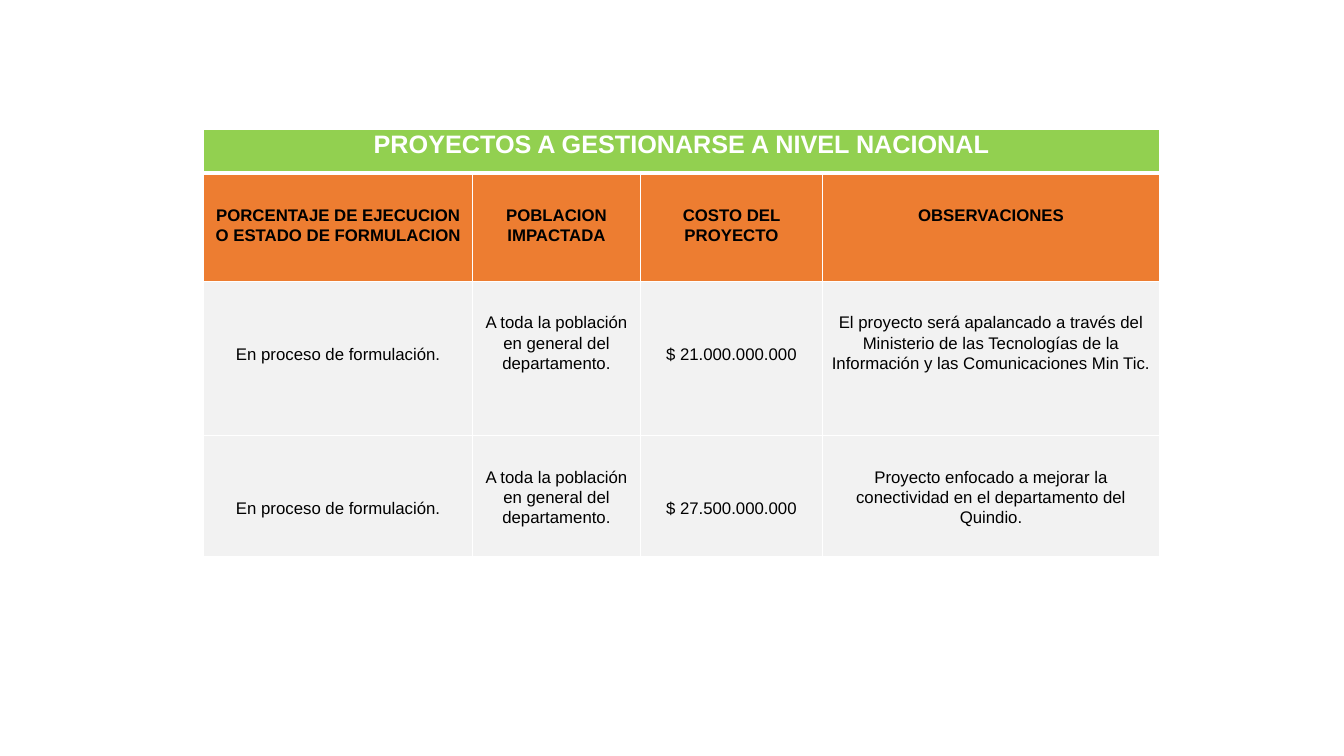
"""Build the slide with the table of projects to be managed at national level."""
from dataclasses import dataclass

from lxml import etree
from pptx import Presentation
from pptx.dml.color import RGBColor
from pptx.enum.text import MSO_ANCHOR, PP_ALIGN
from pptx.oxml.ns import qn
from pptx.table import _Cell
from pptx.util import Inches, Pt

CENTER = PP_ALIGN.CENTER
TOP = MSO_ANCHOR.TOP

WHITE, BLACK = "FFFFFF", "000000"
GREEN, ORANGE, GRAY = "92D050", "ED7D31", "F2F2F2"
FONT = "Arial"
LINE_DROP = 0.31
COLUMN_WIDTHS = (2.67, 1.66, 1.81, 3.34)


@dataclass(frozen=True)
class RowStyle:
    fill: str
    color: str
    size: int
    bold: bool
    top_border: int = 1
    bottom_border: int = 1


@dataclass(frozen=True)
class Entry:
    text: str
    lines_down: int = 1


@dataclass(frozen=True)
class TableRow:
    height: float
    style: RowStyle
    entries: tuple[Entry, ...]


TITLE = RowStyle(GREEN, WHITE, 18, True, bottom_border=3)
HEADING = RowStyle(ORANGE, BLACK, 12, True, top_border=3)
PROJECT = RowStyle(GRAY, BLACK, 12, False)


def project_row(height: float, cost: str, remarks: str) -> TableRow:
    return TableRow(height, PROJECT, (
        Entry("En proceso de formulación.", 2),
        Entry("A toda la población en general del departamento."),
        Entry(cost, 2),
        Entry(remarks),
    ))


ROWS = (
    TableRow(0.44, TITLE, (Entry("PROYECTOS A GESTIONARSE A NIVEL NACIONAL", 0),)),
    TableRow(1.07, HEADING, (
        Entry("PORCENTAJE DE EJECUCION O ESTADO DE FORMULACION"),
        Entry("POBLACION IMPACTADA"),
        Entry("COSTO DEL PROYECTO"),
        Entry("OBSERVACIONES"),
    )),
    project_row(1.53, "$ 21.000.000.000",
                "El proyecto será apalancado a través del Ministerio de las Tecnologías "
                "de la Información y las Comunicaciones Min Tic."),
    project_row(1.2, "$ 27.500.000.000",
                "Proyecto enfocado a mejorar la conectividad en el departamento del Quindio."),
)


def rgb(value: str) -> RGBColor:
    return RGBColor.from_string(value)


def style_cell(cell: _Cell, style: RowStyle) -> None:
    properties = cell._tc.get_or_add_tcPr()
    borders = {"a:lnL": 1, "a:lnR": 1, "a:lnT": style.top_border, "a:lnB": style.bottom_border}
    for tag, width in borders.items():
        border = etree.SubElement(properties, qn(tag), w=str(Pt(width)))
        solid = etree.SubElement(border, qn("a:solidFill"))
        etree.SubElement(solid, qn("a:srgbClr"), val=WHITE)
    cell.fill.solid()
    cell.fill.fore_color.rgb = rgb(style.fill)


def write_entry(cell: _Cell, entry: Entry, style: RowStyle) -> None:
    cell.margin_left = cell.margin_right = Inches(0.07)
    cell.margin_top = Inches(entry.lines_down * LINE_DROP)
    cell.margin_bottom = 0
    cell.vertical_anchor = TOP
    paragraph = cell.text_frame.paragraphs[0]
    paragraph.alignment = CENTER
    paragraph.line_spacing = 1.07
    paragraph.space_after = Pt(8)
    run = paragraph.add_run()
    run.text = entry.text
    run.font.name = FONT
    run.font.size = Pt(style.size)
    run.font.bold = style.bold
    run.font.color.rgb = rgb(style.color)


def main() -> None:
    presentation = Presentation()
    presentation.slide_width = Inches(13.33)
    presentation.slide_height = Inches(7.5)
    slide = presentation.slides.add_slide(presentation.slide_layouts[6])
    projects = slide.shapes.add_table(
        len(ROWS), len(COLUMN_WIDTHS), Inches(2.02), Inches(1.28),
        Inches(sum(COLUMN_WIDTHS)), Inches(sum(row.height for row in ROWS)),
    ).table
    projects.first_row = projects.horz_banding = False
    for column, width in zip(projects.columns, COLUMN_WIDTHS):
        column.width = Inches(width)
    for index, row in enumerate(ROWS):
        projects.rows[index].height = Inches(row.height)
        cells = list(projects.rows[index].cells)
        for cell in cells:
            style_cell(cell, row.style)
        if len(row.entries) == 1:
            cells[0].merge(cells[-1])
        for cell, entry in zip(cells, row.entries):
            write_entry(cell, entry, row.style)
    presentation.save("out.pptx")


if __name__ == "__main__":
    main()
